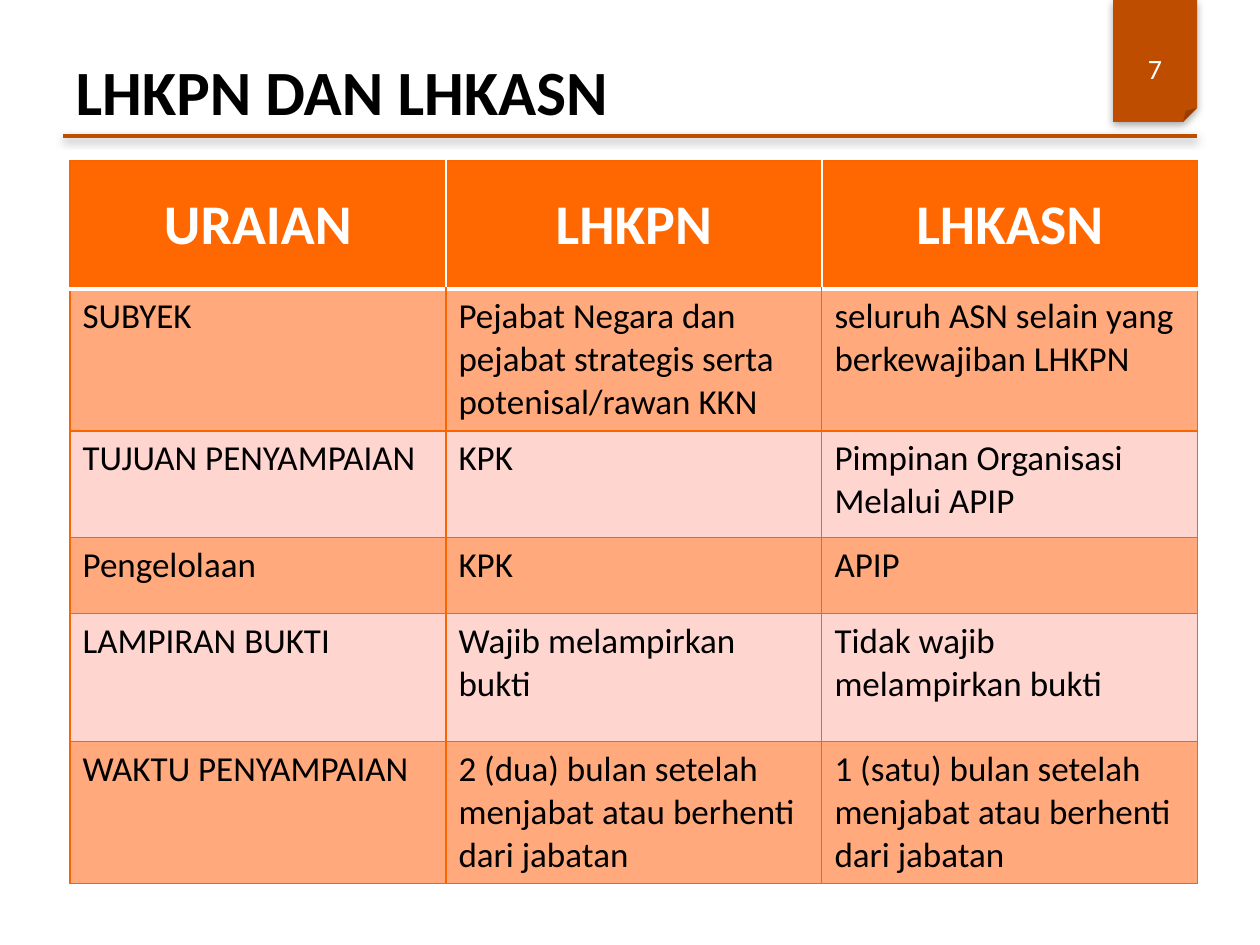
from lxml import etree
from pptx import Presentation
from pptx.dml.color import RGBColor
from pptx.enum.shapes import MSO_CONNECTOR, MSO_SHAPE
from pptx.enum.text import MSO_ANCHOR, PP_ALIGN
from pptx.oxml.ns import qn
from pptx.util import Pt

PX = 914400 / 126
LEFT, CENTER = PP_ALIGN.LEFT, PP_ALIGN.CENTER
TOP, MIDDLE = MSO_ANCHOR.TOP, MSO_ANCHOR.MIDDLE
FOLDED_CORNER = MSO_SHAPE.FOLDED_CORNER
STRAIGHT = MSO_CONNECTOR.STRAIGHT
COLORS = {
    "black": "000000",
    "white": "FFFFFF",
    "rust": "BF4D00",
    "header": "FF6700",
    "border": "F96500",
    "dark_band": "FFA97C",
    "light_band": "FFD5CF",
}


def write(frame, text, size, color="black", bold=False, align=LEFT, anchor=TOP):
    frame.word_wrap = True
    frame.vertical_anchor = anchor
    para = frame.paragraphs[0]
    para.alignment = align
    span = para.add_run()
    span.text = text
    span.font.name = "Calibri"
    span.font.size = Pt(size)
    span.font.bold = bold
    span.font.color.rgb = RGBColor.from_string(COLORS[color])


def add_shadow(shape, distance, opacity):
    properties = shape._element.spPr
    for old in properties.findall(qn("a:effectLst")):
        properties.remove(old)
    effects = etree.SubElement(properties, qn("a:effectLst"))
    shadow = etree.SubElement(effects, qn("a:outerShdw"), blurRad=str(Pt(5)),
                              dist=str(Pt(distance)), dir="5400000", rotWithShape="0")
    shade = etree.SubElement(shadow, qn("a:srgbClr"), val=COLORS["black"])
    etree.SubElement(shade, qn("a:alpha"), val=str(opacity * 1000))


deck = Presentation()
deck.slide_width, deck.slide_height = round(1260 * PX), round(945 * PX)
page = deck.slides.add_slide(deck.slide_layouts[5])

ribbon = page.shapes.add_shape(FOLDED_CORNER, *[round(n * PX) for n in (1113, 0, 84, 122)])
ribbon.fill.solid()
ribbon.fill.fore_color.rgb = RGBColor.from_string(COLORS["rust"])
ribbon.line.fill.background()
add_shadow(ribbon, 1.8, 35)

rule = page.shapes.add_connector(STRAIGHT, *[round(n * PX) for n in (63, 136, 1197, 136)])
rule.line.color.rgb = RGBColor.from_string(COLORS["rust"])
rule.line.width = Pt(2)
add_shadow(rule, 1.6, 38)

title = page.shapes.title
title.left, title.top, title.width, title.height = [round(n * PX) for n in (63, 38, 1134, 105)]
write(title.text_frame, "LHKPN DAN LHKASN", 36, bold=True, anchor=MIDDLE)

number = page.shapes.add_textbox(*[round(n * PX) for n in (1113, 42, 84, 53)])
write(number.text_frame, "7", 16, color="white", align=CENTER, anchor=MIDDLE)

ROWS = [
    (128, "URAIAN", "LHKPN", "LHKASN"),
    (142, "SUBYEK", "Pejabat Negara dan pejabat strategis serta potenisal/rawan KKN",
     "seluruh ASN selain yang berkewajiban LHKPN"),
    (107, "TUJUAN PENYAMPAIAN", "KPK", "Pimpinan Organisasi Melalui APIP"),
    (76, "Pengelolaan", "KPK", "APIP"),
    (128, "LAMPIRAN BUKTI", "Wajib melampirkan bukti", "Tidak wajib melampirkan bukti"),
    (142, "WAKTU PENYAMPAIAN", "2 (dua) bulan setelah menjabat atau berhenti dari jabatan",
     "1 (satu) bulan setelah menjabat atau berhenti dari jabatan"),
]
table = page.shapes.add_table(len(ROWS), 3, *[round(n * PX) for n in (70, 161, 1128, 723)]).table
for column in table.columns:
    column.width = round(376 * PX)

for row, (height, *texts) in enumerate(ROWS):
    table.rows[row].height = round(height * PX)
    for col, text in enumerate(texts):
        cell = table.cell(row, col)
        borders = {side: ("border", 0.75) for side in ("lnL", "lnR", "lnT", "lnB")}
        if row == 0:
            fill = "header"
            borders["lnB"] = ("white", 2)
            if col > 0:
                del borders["lnL"]
            if col < 2:
                del borders["lnR"]
            write(cell.text_frame, text, 32, color="white", bold=True, align=CENTER)
            cell.vertical_anchor = MIDDLE
        else:
            fill = "dark_band" if row % 2 else "light_band"
            if row == 1:
                borders["lnT"] = ("white", 2)
            write(cell.text_frame, text, 20)
            cell.vertical_anchor = TOP
        properties = cell._tc.get_or_add_tcPr()
        for side, (color, width) in borders.items():
            line = etree.SubElement(properties, qn(f"a:{side}"), w=str(Pt(width)))
            paint = etree.SubElement(line, qn("a:solidFill"))
            etree.SubElement(paint, qn("a:srgbClr"), val=COLORS[color])
        cell.fill.solid()
        cell.fill.fore_color.rgb = RGBColor.from_string(COLORS[fill])

deck.save("out.pptx")
